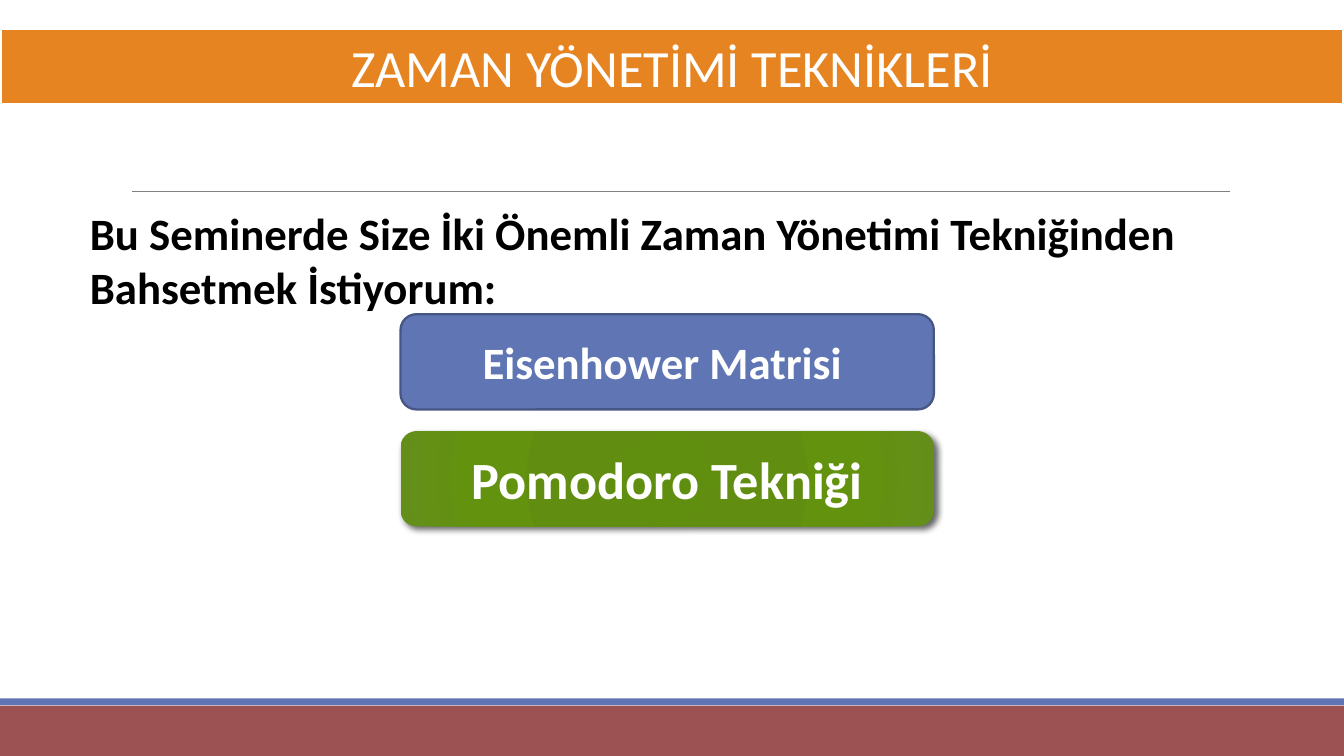
from lxml import etree
from pptx import Presentation
from pptx import util as u
from pptx.dml.color import RGBColor
from pptx.enum import shapes, text
from pptx.oxml import parse_xml
from pptx.oxml.ns import nsdecls, qn

COLORS = {
    "orange": "E68422", "blue": "6076B4", "navy": "475785", "red": "9C5252",
    "gray": "808080", "white": "FFFFFF", "black": "000000",
}
GREENS = [(0, "608E0E"), (34, "618D11"), (70, "63920E"), (100, "648E1A")]
WIDTH, HEIGHT = 25.4, 14.29

deck = Presentation()
deck.slide_width, deck.slide_height = u.Cm(WIDTH), u.Cm(HEIGHT)
slide = deck.slides.add_slide(deck.slide_layouts[6])


def rgb(name):
    return RGBColor.from_string(COLORS[name])


def write(shape, words, size=24, color="white", bold=False,
          align=text.PP_ALIGN.CENTER, anchor=text.MSO_ANCHOR.MIDDLE):
    frame = shape.text_frame
    frame.word_wrap = True
    frame.vertical_anchor = anchor
    paragraph = frame.paragraphs[0]
    paragraph.alignment = align
    run = paragraph.add_run()
    run.text = words
    run.font.name = "Calibri"
    run.font.size = u.Pt(size)
    run.font.bold = bold
    run.font.color.rgb = rgb(color)


def add_block(preset, left, top, width, height, fill, line=None, line_width=1):
    block = slide.shapes.add_shape(
        preset, u.Cm(left), u.Cm(top), u.Cm(width), u.Cm(height))
    block.shadow.inherit = False
    block.fill.solid()
    block.fill.fore_color.rgb = rgb(fill)
    if line:
        block.line.color.rgb = rgb(line)
        block.line.width = u.Pt(line_width)
    else:
        block.line.fill.background()
    return block


RECT = shapes.MSO_SHAPE.RECTANGLE
ROUNDED = shapes.MSO_SHAPE.ROUNDED_RECTANGLE

# Footer bands and divider
add_block(RECT, 0, 13.34, WIDTH, 0.95, "red")
add_block(RECT, 0, 13.2, WIDTH, 0.13, "blue")
divider = slide.shapes.add_connector(
    shapes.MSO_CONNECTOR.STRAIGHT, u.Cm(2.5), u.Cm(3.62), u.Cm(23.24), u.Cm(3.62))
divider.line.color.rgb = rgb("gray")
divider.line.width = u.Pt(0.5)
etree.SubElement(divider.element.spPr, qn("a:effectLst"))

# Title and introduction
title = add_block(RECT, 0, 0.54, WIDTH, 1.45, "orange", "white", 2)
write(title, "ZAMAN YÖNETİMİ TEKNİKLERİ", size=28, anchor=text.MSO_ANCHOR.TOP)
intro = slide.shapes.add_textbox(u.Cm(1.45), u.Cm(3.76), u.Cm(22.4), u.Cm(7.19))
write(intro, "Bu Seminerde Size İki Önemli Zaman Yönetimi Tekniğinden Bahsetmek İstiyorum:",
      color="black", bold=True, align=text.PP_ALIGN.LEFT, anchor=text.MSO_ANCHOR.TOP)

# The two techniques
matrix = add_block(ROUNDED, 7.57, 5.94, 10.08, 1.8, "blue", "navy", 1.25)
write(matrix, "Eisenhower Matrisi ", bold=True)
pomodoro = add_block(ROUNDED, 7.57, 8.15, 10.08, 1.8, "blue")
write(pomodoro, "Pomodoro Tekniği", size=28, bold=True)

# Radial gradient and soft shadow
stops = "".join(f'<a:gs pos="{share * 1000}"><a:srgbClr val="{green}"/></a:gs>'
                for share, green in GREENS)
gradient = parse_xml(
    f'<a:gradFill {nsdecls("a")} rotWithShape="1"><a:gsLst>{stops}</a:gsLst>'
    '<a:path path="circle"><a:fillToRect l="100000" t="100000" r="100000" b="100000"/>'
    '</a:path></a:gradFill>')
shadow = parse_xml(
    f'<a:outerShdw {nsdecls("a")} blurRad="{u.Pt(3.5)}" dist="{u.Pt(2)}" dir="2700000" '
    f'algn="ctr" rotWithShape="0"><a:srgbClr val="{COLORS["black"]}">'
    '<a:alpha val="60000"/></a:srgbClr></a:outerShdw>')
properties = pomodoro.element.spPr
properties.replace(properties.find(qn("a:solidFill")), gradient)
properties.find(qn("a:effectLst")).append(shadow)

deck.save("out.pptx")
